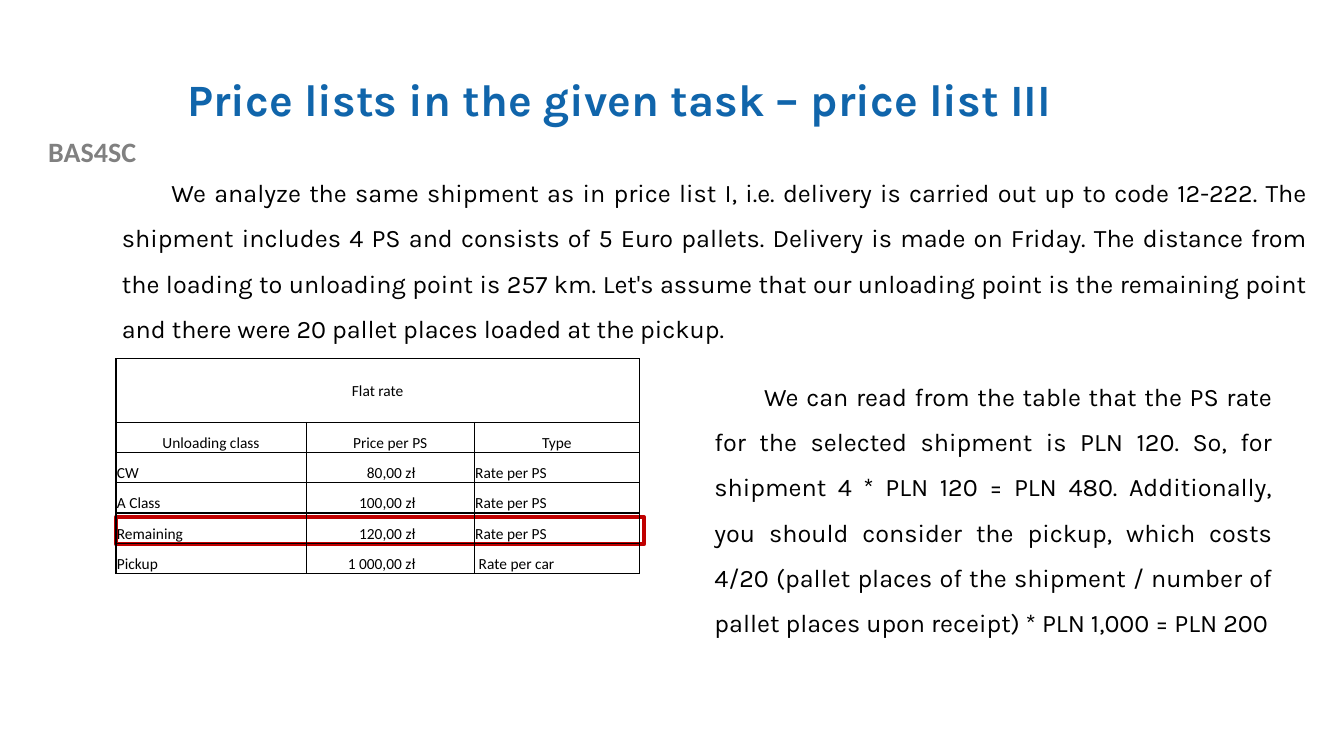
from lxml.etree import SubElement
from pptx import Presentation
from pptx.dml.color import RGBColor
from pptx.enum.shapes import MSO_SHAPE
from pptx.enum.text import MSO_ANCHOR, PP_ALIGN
from pptx.oxml.ns import qn
from pptx.util import Pt

COLORS = {"title": "1065AB", "label": "808080", "text": "000000", "highlight": "C00000"}

SHIPMENT = (
    "We analyze the same shipment as in price list I, i.e. delivery is carried out "
    "up to code 12-222. The shipment includes 4 PS and consists of 5 Euro pallets. "
    "Delivery is made on Friday. The distance from the loading to unloading point is "
    "257 km. Let's assume that our unloading point is the remaining point and there "
    "were 20 pallet places loaded at the pickup."
)
CALCULATION = (
    "We can read from the table that the PS rate for the selected shipment is PLN 120. "
    "So, for shipment 4 * PLN 120 = PLN 480. Additionally, you should consider the "
    "pickup, which costs 4/20 (pallet places of the shipment / number of pallet places "
    "upon receipt) * PLN 1,000 = PLN 200"
)
RATES = [
    ("Flat rate", "", ""),
    ("Unloading class", "Price per PS", "Type"),
    ("CW", "80,00 zł", "Rate per PS"),
    ("A Class", "100,00 zł", "Rate per PS"),
    ("Remaining", "120,00 zł", "Rate per PS"),
    ("Pickup", "1 000,00 zł", "Rate per car"),
]
COLUMN_WIDTHS = [136, 120, 118]
HEADING_HEIGHT, ROW_HEIGHT = 45.4, 21.6


def style(paragraph, font_name, size, color, bold=False):
    font = paragraph.font
    font.name, font.size, font.bold = font_name, Pt(size), bold
    font.color.rgb = RGBColor.from_string(COLORS[color])


def add_text(slide, box, text, anchor=MSO_ANCHOR.TOP):
    """Add a wrapping text box and return its paragraph."""
    frame = slide.shapes.add_textbox(*map(Pt, box)).text_frame
    frame.word_wrap = True
    frame.vertical_anchor = anchor
    frame.text = text
    return frame.paragraphs[0]


def add_body(slide, box, text):
    body = add_text(slide, box, text)
    body.alignment = PP_ALIGN.JUSTIFY
    body.line_spacing = 1.5
    body.space_after = Pt(6)
    properties = body._p.get_or_add_pPr()
    properties.set("marL", "0")
    properties.set("indent", str(Pt(35.4)))
    style(body, "Karla", 18, "text")


def add_highlight(slide, box):
    highlight = slide.shapes.add_shape(MSO_SHAPE.RECTANGLE, *map(Pt, box))
    highlight.shadow.inherit = False
    highlight.fill.background()
    highlight.line.color.rgb = RGBColor.from_string(COLORS["highlight"])
    highlight.line.width = Pt(3)


def add_borders(cell):
    properties = cell._tc.get_or_add_tcPr()
    for position, side in enumerate(("lnL", "lnR", "lnT", "lnB")):
        border = SubElement(properties, qn(f"a:{side}"), w=str(Pt(1)))
        properties.insert(position, border)
        fill = SubElement(border, qn("a:solidFill"))
        SubElement(fill, qn("a:srgbClr"), val=COLORS["text"])


def add_rate_table(slide, left, top):
    height = HEADING_HEIGHT + ROW_HEIGHT * (len(RATES) - 1)
    box = (left, top, sum(COLUMN_WIDTHS), height)
    rates = slide.shapes.add_table(
        len(RATES), len(COLUMN_WIDTHS), *map(Pt, box)
    ).table
    rates.first_row = rates.horz_banding = False
    for column, width in zip(rates.columns, COLUMN_WIDTHS):
        column.width = Pt(width)
    for r, row in enumerate(RATES):
        rates.rows[r].height = Pt(ROW_HEIGHT if r else HEADING_HEIGHT)
        for c, text in enumerate(row):
            cell = rates.cell(r, c)
            is_price = r > 1 and c == 1
            cell.margin_left = Pt(3.2 if text == "Rate per car" else 0.7)
            cell.margin_right = Pt(42 if is_price else 0.7)
            cell.margin_top, cell.margin_bottom = Pt(0.7), Pt(0)
            cell.vertical_anchor = MSO_ANCHOR.BOTTOM if r else MSO_ANCHOR.MIDDLE
            cell.fill.background()
            add_borders(cell)
            cell.text_frame.text = text
            entry = cell.text_frame.paragraphs[0]
            if r < 2:
                entry.alignment = PP_ALIGN.CENTER
            else:
                entry.alignment = PP_ALIGN.RIGHT if is_price else PP_ALIGN.LEFT
            style(entry, "Calibri", 11, "text")
    rates.cell(0, 0).merge(rates.cell(0, len(COLUMN_WIDTHS) - 1))


def main():
    presentation = Presentation()
    presentation.slide_width, presentation.slide_height = Pt(960), Pt(540)
    slide = presentation.slides.add_slide(presentation.slide_layouts[6])

    label = add_text(slide, (0, 92.2, 131.8, 31.7), "BAS4SC")
    label.alignment = PP_ALIGN.CENTER
    style(label, "Calibri", 20, "label", bold=True)

    title = add_text(slide, (126.7, 28.8, 767.5, 87.8),
                     "Price lists in the given task – price list III", MSO_ANCHOR.MIDDLE)
    title.line_spacing = 0.9
    style(title, "Karla", 32, "title", bold=True)

    add_body(slide, (80, 112.3, 861, 134), SHIPMENT)
    add_highlight(slide, (82.8, 369.4, 377.3, 19.4))
    add_body(slide, (503.3, 257.8, 412.6, 237.6), CALCULATION)
    add_rate_table(slide, 82.8, 256.3)

    presentation.save("out.pptx")


if __name__ == "__main__":
    main()
